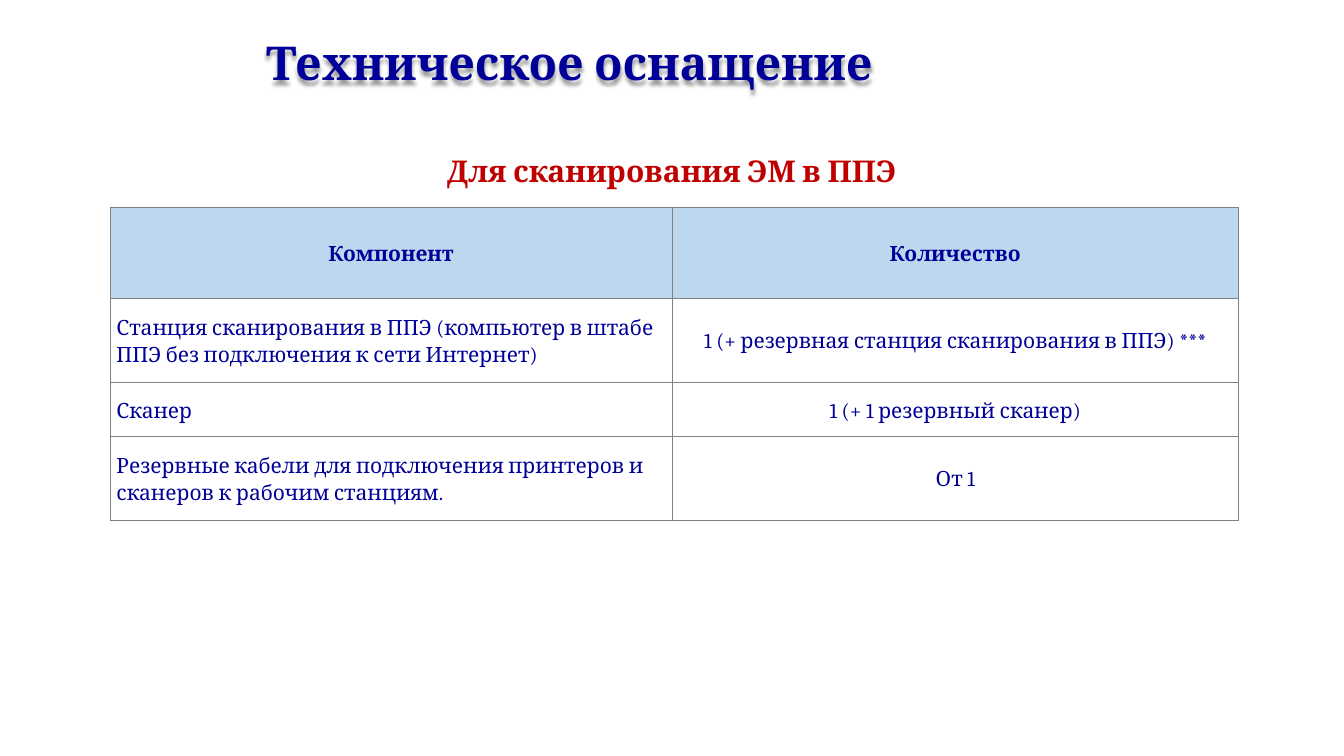
from dataclasses import dataclass

from lxml import etree
from pptx import Presentation
from pptx.dml.color import RGBColor
from pptx.enum.text import MSO_ANCHOR, MSO_AUTO_SIZE, PP_ALIGN
from pptx.oxml import parse_xml
from pptx.oxml.ns import nsdecls
from pptx.slide import Slide
from pptx.table import _Cell
from pptx.text.text import TextFrame
from pptx.util import Pt

LEFT, CENTER = PP_ALIGN.LEFT, PP_ALIGN.CENTER
TOP, MIDDLE = MSO_ANCHOR.TOP, MSO_ANCHOR.MIDDLE
NO_AUTOFIT = MSO_AUTO_SIZE.NONE

NAVY = RGBColor(0x00, 0x00, 0x99)
RED = RGBColor(0xC0, 0x00, 0x00)
HEADER_BLUE = RGBColor(0xBD, 0xD7, 0xEE)
BORDER_GREY = RGBColor(0x80, 0x80, 0x80)
FONT = "Cambria"
COLUMN_WIDTHS = (401.4, 404.6)


@dataclass(frozen=True)
class TextStyle:
    size: float
    color: RGBColor
    bold: bool
    align: PP_ALIGN
    line_spacing: float = 1.15


@dataclass(frozen=True)
class EquipmentRow:
    component: str
    quantity: str
    height: float
    is_header: bool = False


TITLE_STYLE = TextStyle(33.3, NAVY, True, LEFT, 1.0)
SUBTITLE_STYLE = TextStyle(21.4, RED, True, CENTER)
HEADER_STYLE = TextStyle(15, NAVY, True, CENTER)
COMPONENT_STYLE = TextStyle(15, NAVY, False, LEFT)
QUANTITY_STYLE = TextStyle(15, NAVY, False, CENTER)

EQUIPMENT = (
    EquipmentRow("Компонент", "Количество", 64.8, True),
    EquipmentRow(
        "Станция сканирования в ППЭ (компьютер в штабе ППЭ без подключения к сети Интернет)",
        "1 (+ резервная станция сканирования в ППЭ) ***",
        60.2,
    ),
    EquipmentRow("Сканер", "1 (+ 1 резервный сканер)", 38.4),
    EquipmentRow(
        "Резервные кабели для подключения принтеров и сканеров к рабочим станциям.",
        "От 1",
        60.2,
    ),
)


def write_text(frame: TextFrame, text: str, style: TextStyle) -> None:
    frame.word_wrap = True
    frame.text = text
    paragraph = frame.paragraphs[0]
    paragraph.alignment = style.align
    paragraph.line_spacing = style.line_spacing
    font = paragraph.runs[0].font
    font.name = FONT
    font.size = Pt(style.size)
    font.bold = style.bold
    font.color.rgb = style.color


def add_title(slide: Slide) -> None:
    title = slide.shapes.title
    title.left, title.top = Pt(182.9), Pt(20.6)
    title.width, title.height = Pt(722), Pt(46.8)
    title.fill.background()
    write_text(title.text_frame, "Техническое оснащение", TITLE_STYLE)
    title.text_frame.auto_size = NO_AUTOFIT
    title.text_frame.vertical_anchor = TOP
    title._element.spPr.append(parse_xml(
        f'<a:effectLst {nsdecls("a")}>'
        f'<a:outerShdw blurRad="{Pt(3)}" dist="{Pt(3)}" dir="5400000" algn="t" rotWithShape="0">'
        '<a:srgbClr val="000000"><a:alpha val="40000"/></a:srgbClr>'
        '</a:outerShdw></a:effectLst>'
    ))


def add_subtitle(slide: Slide) -> None:
    subtitle = slide.shapes.add_textbox(Pt(74.9), Pt(101.5), Pt(810), Pt(37.4))
    write_text(subtitle.text_frame, "Для сканирования ЭМ в ППЭ", SUBTITLE_STYLE)


def draw_borders(cell: _Cell) -> None:
    properties = cell._tc.get_or_add_tcPr()
    for position, side in enumerate(("lnL", "lnR", "lnT", "lnB")):
        border: etree._Element = parse_xml(
            f'<a:{side} {nsdecls("a")} w="{Pt(0.75)}"><a:solidFill>'
            f'<a:srgbClr val="{BORDER_GREY}"/></a:solidFill></a:{side}>'
        )
        properties.insert(position, border)


def fill_cell(cell: _Cell, text: str, style: TextStyle, is_header: bool) -> None:
    cell.margin_left = cell.margin_right = Pt(4.5)
    cell.margin_top = cell.margin_bottom = Pt(0)
    cell.vertical_anchor = MIDDLE
    if is_header:
        cell.fill.solid()
        cell.fill.fore_color.rgb = HEADER_BLUE
    else:
        cell.fill.background()
    draw_borders(cell)
    write_text(cell.text_frame, text, style)


def add_equipment_table(slide: Slide) -> None:
    total_height = sum(row.height for row in EQUIPMENT)
    table = slide.shapes.add_table(
        len(EQUIPMENT), len(COLUMN_WIDTHS),
        Pt(78.7), Pt(148.2), Pt(sum(COLUMN_WIDTHS)), Pt(total_height),
    ).table
    table.first_row = table.horz_banding = False
    for column, width in zip(table.columns, COLUMN_WIDTHS):
        column.width = Pt(width)
    for index, row in enumerate(EQUIPMENT):
        table.rows[index].height = Pt(row.height)
        component_style = HEADER_STYLE if row.is_header else COMPONENT_STYLE
        quantity_style = HEADER_STYLE if row.is_header else QUANTITY_STYLE
        fill_cell(table.cell(index, 0), row.component, component_style, row.is_header)
        fill_cell(table.cell(index, 1), row.quantity, quantity_style, row.is_header)


def main() -> None:
    presentation = Presentation()
    presentation.slide_width, presentation.slide_height = Pt(960), Pt(540)
    slide = presentation.slides.add_slide(presentation.slide_layouts[5])
    add_title(slide)
    add_equipment_table(slide)
    add_subtitle(slide)
    presentation.save("out.pptx")


if __name__ == "__main__":
    main()
